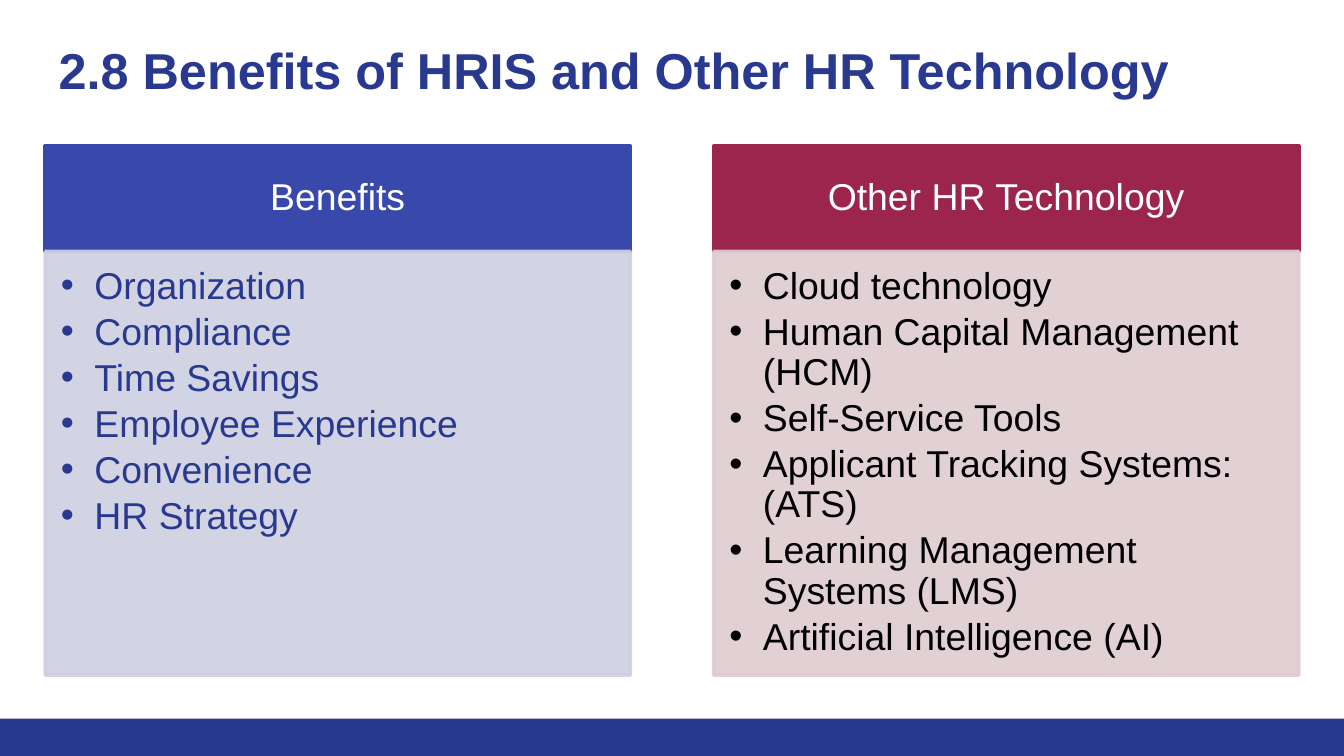
import pptx
import pptx.dml.color
import pptx.enum.shapes
import pptx.enum.text
import pptx.oxml
import pptx.oxml.ns
import pptx.util
from lxml import etree

Pt = pptx.util.Pt
ALIGN = pptx.enum.text.PP_ALIGN
ANCHOR = pptx.enum.text.MSO_ANCHOR

TITLE = "2.8 Benefits of HRIS and Other HR Technology"
NAVY = "2A3990"
COLUMNS = [
    {
        "heading": "Benefits",
        "items": ["Organization", "Compliance", "Time Savings",
                  "Employee Experience", "Convenience", "HR Strategy"],
        "strong": "3949AB", "pale": "CED0E2", "ink": NAVY,
    },
    {
        "heading": "Other HR Technology",
        "items": ["Cloud technology", "Human Capital Management (HCM)",
                  "Self-Service Tools", "Applicant Tracking Systems: (ATS)",
                  "Learning Management Systems (LMS)",
                  "Artificial Intelligence (AI)"],
        "strong": "9C254D", "pale": "DECDD0", "ink": "000000",
    },
]

SLIDE_W, SLIDE_H = 720, 405
MARGIN = 24.2
COLUMN_W = 313.5
COLUMN_STEP = SLIDE_W - 2 * MARGIN - COLUMN_W
HEADING_TOP, HEADING_H = 78.2, 56.6
LIST_TOP, LIST_H = HEADING_TOP + HEADING_H, 226.8
FOOTER_H = 20


def paint(color_owner, color):
    """Give a fill or a font a solid colour from a hex string."""
    if hasattr(color_owner, "solid"):
        color_owner.solid()
        color_owner = color_owner.fore_color
    else:
        color_owner = color_owner.color
    color_owner.rgb = pptx.dml.color.RGBColor.from_string(color)


def place(part, left, top, width, height):
    part.left, part.top = Pt(left), Pt(top)
    part.width, part.height = Pt(width), Pt(height)


def fill_box(part, color, opacity=100):
    paint(part.fill, color)
    paint(part.line.fill, color)
    part.line.width = Pt(2)
    if opacity < 100:
        properties = part.fill._xPr
        for swatch in properties.iter(pptx.oxml.ns.qn("a:srgbClr")):
            etree.SubElement(swatch, pptx.oxml.ns.qn("a:alpha"),
                             val=str(opacity * 1000))


def write(part, lines, size, color, insets, anchor, align,
          bold=False, spacing=1.0, after=0):
    frame = part.text_frame
    frame.text = "\n".join(lines)
    frame.word_wrap = True
    frame.auto_size = pptx.enum.text.MSO_AUTO_SIZE.NONE
    frame.vertical_anchor = anchor
    (frame.margin_left, frame.margin_top,
     frame.margin_right, frame.margin_bottom) = map(Pt, insets)
    for paragraph in frame.paragraphs:
        paragraph.alignment = align
        paragraph.line_spacing = spacing
        paragraph.space_before = Pt(0)
        paragraph.space_after = Pt(after)
        for run in paragraph.runs:
            run.font.name = "Arial"
            run.font.size = Pt(size)
            run.font.bold = bold
            paint(run.font, color)


def add_bullets(part, indent):
    for paragraph in part.text_frame.paragraphs:
        paragraph.level = 1
        properties = paragraph._p.get_or_add_pPr()
        properties.set("marL", str(Pt(indent)))
        properties.set("indent", str(-Pt(indent)))
        etree.SubElement(properties, pptx.oxml.ns.qn("a:buFont"), typeface="Arial")
        etree.SubElement(properties, pptx.oxml.ns.qn("a:buChar"), char="•")


def main():
    deck = pptx.Presentation()
    deck.slide_width, deck.slide_height = Pt(SLIDE_W), Pt(SLIDE_H)
    comparison = deck.slide_layouts.get_by_name("Comparison")
    slide = deck.slides.add_slide(comparison)

    footer = slide.shapes.add_shape(
        pptx.enum.shapes.MSO_SHAPE.RECTANGLE,
        0, Pt(SLIDE_H - FOOTER_H), Pt(SLIDE_W), Pt(FOOTER_H))
    footer.shadow.inherit = False
    paint(footer.fill, NAVY)
    footer.line.fill.background()

    title = slide.shapes.title
    place(title, MARGIN, 13.7, SLIDE_W - 2 * MARGIN, 64)
    write(title, [TITLE], 27, NAVY, (7.2, 7.2, 7.2, 7.2),
          ANCHOR.TOP, ALIGN.LEFT, bold=True)

    for number, column in enumerate(COLUMNS):
        left = MARGIN + number * COLUMN_STEP
        heading = slide.placeholders[1 + 2 * number]
        items = slide.placeholders[2 + 2 * number]

        place(heading, left, HEADING_TOP, COLUMN_W, HEADING_H)
        fill_box(heading, column["strong"])
        write(heading, [column["heading"]], 20, "FFFFFF",
              (11.2, 6.4, 11.2, 6.4), ANCHOR.MIDDLE, ALIGN.CENTER, spacing=0.9)

        place(items, left, LIST_TOP, COLUMN_W, LIST_H)
        fill_box(items, column["pale"], opacity=90)
        write(items, column["items"], 20, column["ink"],
              (8.4, 8.4, 11.2, 12.6), ANCHOR.TOP, ALIGN.LEFT,
              spacing=0.9, after=3)
        add_bullets(items, 18)

    deck.save("out.pptx")


if __name__ == "__main__":
    main()
